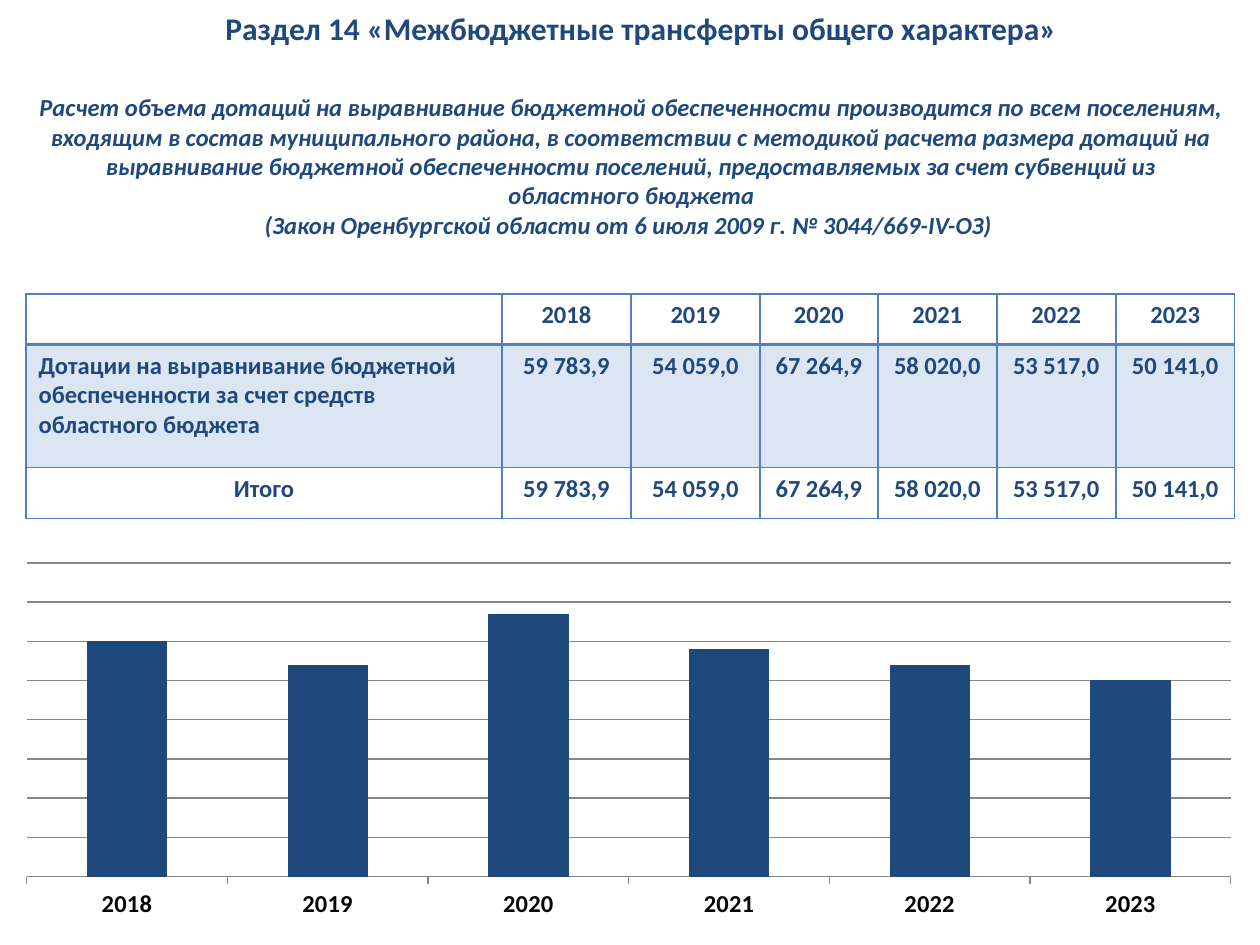
from pptx import Presentation, util as u
from pptx.chart.data import CategoryChartData
from pptx.dml.color import RGBColor
from pptx.enum import chart as ch, text as t
from pptx.oxml import parse_xml
from pptx.oxml.ns import nsdecls

TITLE = "Раздел 14 «Межбюджетные трансферты общего характера»"
INTRO = [
    "Расчет объема дотаций на выравнивание бюджетной обеспеченности производится "
    "по всем поселениям, входящим в состав муниципального района, в соответствии "
    "с методикой расчета размера дотаций на выравнивание бюджетной обеспеченности "
    "поселений, предоставляемых за счет субвенций из областного бюджета",
    "(Закон Оренбургской области от 6 июля 2009 г. № 3044/669-IV-ОЗ) ",
]
GRANTS = {"2018": 59783.9, "2019": 54059.0, "2020": 67264.9,
          "2021": 58020.0, "2022": 53517.0, "2023": 50141.0}
GRANT_LABEL = ("Дотации на выравнивание бюджетной обеспеченности "
               "за счет средств областного бюджета")
TOTAL_LABEL = "Итого"
COLORS = {"navy": "1F497D", "blue": "4F81BD", "band": "DCE6F2",
          "grid": "878787", "black": "000000"}
FONT = "Calibri"
COLS = [476, 129, 129, 118, 119, 119, 119]
ROWS = [50, 123, 51]


def px(n):
    return u.Emu(round(n * 914400 / 126))


def rgb(name):
    return RGBColor.from_string(COLORS[name])


def style(font, size=14, color="navy", bold=True, italic=False):
    font.name, font.size = FONT, u.Pt(size)
    font.bold, font.italic = bold, italic
    font.color.rgb = rgb(color)


def write(tf, paragraphs, align=t.PP_ALIGN.CENTER, **fmt):
    tf.word_wrap = True
    for i, line in enumerate(paragraphs):
        p = tf.add_paragraph() if i else tf.paragraphs[0]
        p.alignment = align
        r = p.add_run()
        r.text = line
        style(r.font, **fmt)


def border(cell, bottom):
    tc_pr = cell._tc.get_or_add_tcPr()
    sides = {"lnL": 1, "lnR": 1, "lnT": 1, "lnB": bottom}
    for i, (side, width) in enumerate(sides.items()):
        tc_pr.insert(i, parse_xml(
            f'<a:{side} {nsdecls("a")} w="{u.Pt(width)}"><a:solidFill>'
            f'<a:srgbClr val="{COLORS["blue"]}"/></a:solidFill></a:{side}>'))


def add_table(s):
    amounts = [f"{v:,.1f}".replace(",", " ").replace(".", ",") for v in GRANTS.values()]
    rows = [["", *GRANTS], [GRANT_LABEL, *amounts], [TOTAL_LABEL, *amounts]]
    table = s.shapes.add_table(len(ROWS), len(COLS), px(26), px(294),
                               px(sum(COLS)), px(sum(ROWS))).table
    table.first_row = table.horz_banding = False
    for col, width in zip(table.columns, COLS):
        col.width = px(width)
    for i, (row, height) in enumerate(zip(rows, ROWS)):
        table.rows[i].height = px(height)
        for j, value in enumerate(row):
            cell = table.cell(i, j)
            if i == 1:
                cell.fill.solid()
                cell.fill.fore_color.rgb = rgb("band")
            else:
                cell.fill.background()
            border(cell, bottom=2 if i == 0 else 1)
            if value:
                align = t.PP_ALIGN.LEFT if value == GRANT_LABEL else t.PP_ALIGN.CENTER
                write(cell.text_frame, [value], align)


def add_chart(s):
    data = CategoryChartData(number_format="0.0")
    data.categories = list(GRANTS)
    data.add_series(GRANT_LABEL, [round(v / 1000) for v in GRANTS.values()])
    chart = s.shapes.add_chart(ch.XL_CHART_TYPE.COLUMN_CLUSTERED,
                               px(26), px(552), px(1211), px(367), data).chart
    chart.has_legend = chart.has_title = False
    style(chart.font, size=10, color="black", bold=False)
    plot = chart.plots[0]
    plot.gap_width, plot.vary_by_categories = 150, False
    fill = plot.series[0].format.fill
    fill.solid()
    fill.fore_color.rgb = rgb("navy")
    years, values = chart.category_axis, chart.value_axis
    style(years.tick_labels.font, color="black")
    years.major_tick_mark = ch.XL_TICK_MARK.OUTSIDE
    values.minimum_scale, values.maximum_scale, values.major_unit = 0, 80, 10
    values.has_major_gridlines = True
    values.visible = False
    for line in (years.format.line, values.major_gridlines.format.line):
        line.color.rgb, line.width = rgb("grid"), u.Pt(0.75)
    area = chart._chartSpace.chart.plotArea
    for old in area.findall("{*}layout"):
        area.remove(old)
    box = {"x": 0, "y": 0.03, "w": 0.995, "h": 0.86}
    area.insert(0, parse_xml(
        f'<c:layout {nsdecls("c")}><c:manualLayout><c:layoutTarget val="inner"/>'
        '<c:xMode val="edge"/><c:yMode val="edge"/>'
        + "".join(f'<c:{k} val="{v}"/>' for k, v in box.items())
        + "</c:manualLayout></c:layout>"))


def main():
    prs = Presentation()
    prs.slide_width, prs.slide_height = px(1260), px(945)
    s = prs.slides.add_slide(prs.slide_layouts[6])
    title = s.shapes.add_textbox(px(213), px(3), px(888), px(50))
    write(title.text_frame, [TITLE], t.PP_ALIGN.LEFT, size=18)
    add_table(s)
    intro = s.shapes.add_textbox(px(26), px(86), px(1211), px(161))
    write(intro.text_frame, INTRO, italic=True)
    add_chart(s)
    prs.save("out.pptx")


if __name__ == "__main__":
    main()
